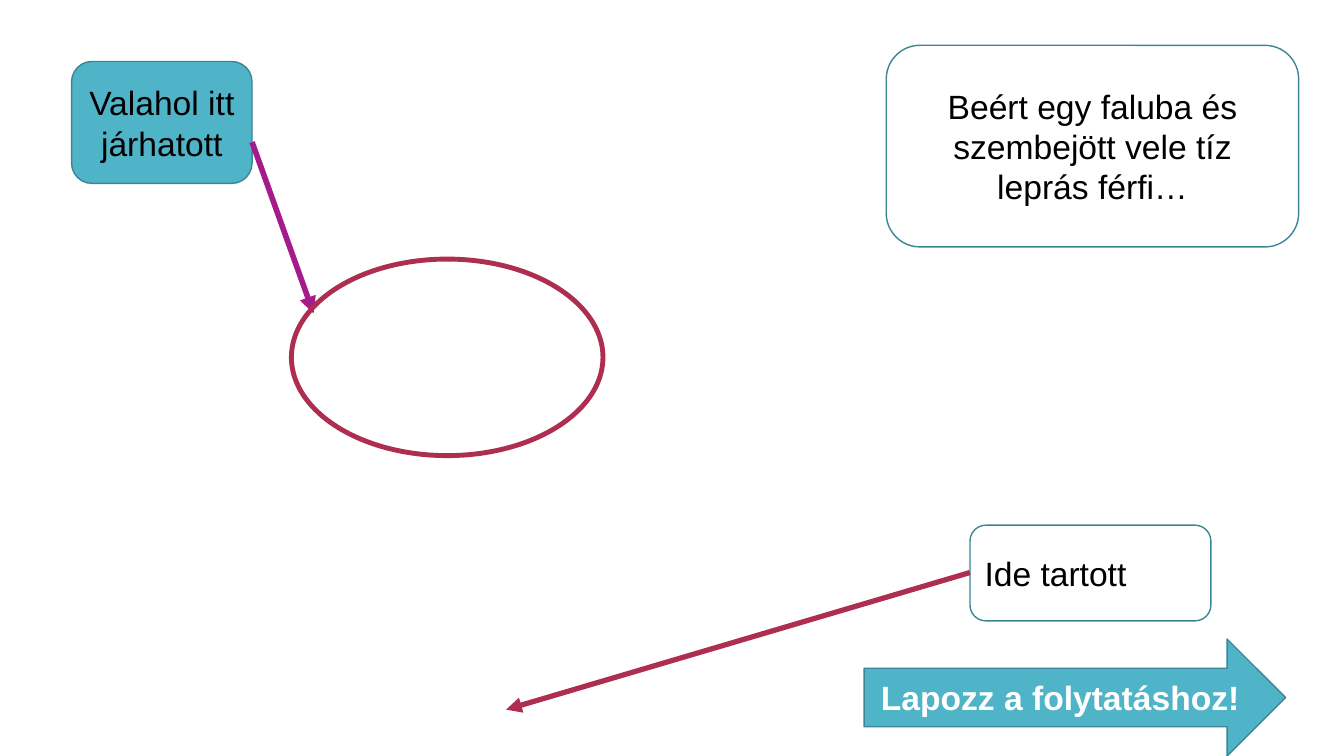
from lxml import etree
from pptx import Presentation
from pptx.dml.color import RGBColor
from pptx.enum.shapes import MSO_CONNECTOR, MSO_SHAPE
from pptx.enum.text import MSO_ANCHOR, PP_ALIGN
from pptx.oxml.ns import qn
from pptx.util import Inches, Pt

BLACK = RGBColor(0x00, 0x00, 0x00)
WHITE = RGBColor(0xFF, 0xFF, 0xFF)
TEAL = RGBColor(0x50, 0xB4, 0xC8)
DARK_TEAL = RGBColor(0x3B, 0x85, 0x94)
CRIMSON = RGBColor(0xAE, 0x2E, 0x51)
PURPLE = RGBColor(0xA5, 0x1B, 0x8B)

ROUNDED = MSO_SHAPE.ROUNDED_RECTANGLE
RIGHT_ARROW = MSO_SHAPE.RIGHT_ARROW
OVAL = MSO_SHAPE.OVAL
STRAIGHT = MSO_CONNECTOR.STRAIGHT
MIDDLE = MSO_ANCHOR.MIDDLE
CENTER = PP_ALIGN.CENTER
JUSTIFY = PP_ALIGN.JUSTIFY

COLUMNS, ROWS = 133.3, 75


def write_text(shape, text, font="Arial", size=24, color=BLACK, bold=False, align=CENTER):
    frame = shape.text_frame
    frame.word_wrap = True
    frame.vertical_anchor = MIDDLE
    paragraph = frame.paragraphs[0]
    paragraph.text = text
    paragraph.alignment = align
    paragraph.font.name = font
    paragraph.font.size = Pt(size)
    paragraph.font.bold = bold
    paragraph.font.color.rgb = color


class MapSlide:
    """Places elements on a grid of COLUMNS by ROWS cells."""

    def __init__(self, presentation):
        self.slide = presentation.slides.add_slide(presentation.slide_layouts[6])
        self.column = presentation.slide_width / COLUMNS
        self.row = presentation.slide_height / ROWS

    def cells(self, column, row):
        return round(column * self.column), round(row * self.row)

    def shape(self, kind, position, size, fill=None, line=DARK_TEAL, width=1):
        shape = self.slide.shapes.add_shape(kind, *self.cells(*position), *self.cells(*size))
        shape.shadow.inherit = False
        if fill is None:
            shape.fill.background()
        else:
            shape.fill.solid()
            shape.fill.fore_color.rgb = fill
        shape.line.color.rgb = line
        shape.line.width = Pt(width)
        return shape

    def label(self, text, position, size, kind=ROUNDED, fill=None, **text_format):
        write_text(self.shape(kind, position, size, fill), text, **text_format)

    def arrow(self, start, end, color, width):
        connector = self.slide.shapes.add_connector(
            STRAIGHT, *self.cells(*start), *self.cells(*end))
        connector.line.color.rgb = color
        connector.line.width = Pt(width)
        etree.SubElement(connector.line._get_or_add_ln(), qn("a:tailEnd"), type="triangle")
        etree.SubElement(connector._element.spPr, qn("a:effectLst"))


def main():
    presentation = Presentation()
    presentation.slide_width = Inches(13.33)
    presentation.slide_height = Inches(7.5)

    journey = MapSlide(presentation)
    journey.label("Ide tartott", (96.2, 52.1), (23.9, 9.5), align=JUSTIFY)
    journey.label("Valahol itt járhatott", (7.1, 6.1), (17.9, 12.1), fill=TEAL)
    journey.label("Lapozz a folytatáshoz!", (85.7, 63.4), (41.8, 11.6),
                  kind=RIGHT_ARROW, fill=TEAL, color=WHITE, bold=True)
    journey.arrow((96.2, 56.8), (50.2, 70.4), CRIMSON, 3.75)
    journey.arrow((25, 14.1), (31.1, 31.1), PURPLE, 4)
    journey.shape(OVAL, (28.9, 25.7), (30.9, 19.5), line=CRIMSON, width=3.5)
    journey.label("Beért egy faluba és szembejött vele tíz leprás férfi…",
                  (87.9, 4.5), (40.9, 20))

    presentation.save("out.pptx")


if __name__ == "__main__":
    main()
